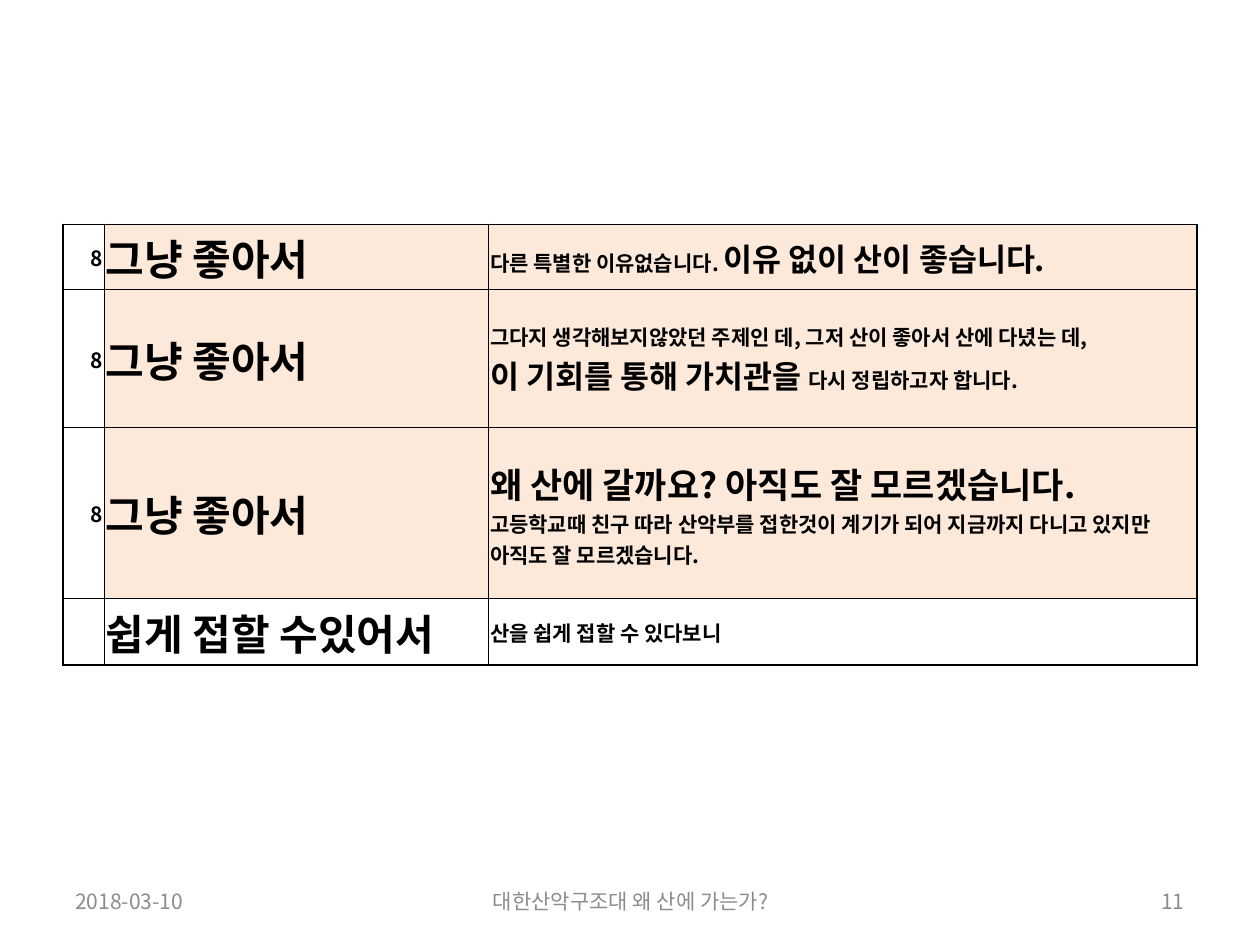
from lxml.etree import SubElement
from pptx import Presentation
from pptx.dml.color import RGBColor
from pptx.enum.text import MSO_ANCHOR as Anchor, PP_ALIGN as Align
from pptx.oxml import parse_xml
from pptx.oxml.ns import nsdecls, qn
from pptx.util import Inches, Pt

COLORS = {"ink": "000000", "peach": "FDE9D9", "footer": "8C8C8C"}
FONT = "Noto Sans CJK KR"
BASE = 12
COLUMNS = [0.33, 3.05, 5.62]
ROWS = [0.52, 1.09, 1.36, 0.53]
ANSWERS = [
    ("8", "그냥 좋아서",
     [[("다른 특별한 이유없습니다. ", 12), ("이유 없이 산이 좋습니다.", 18)]]),
    ("8", "그냥 좋아서",
     [[("그다지 생각해보지않았던 주제인 데, 그저 산이 좋아서 산에 다녔는 데, ", 12)],
      [("이 기회를 통해 가치관을 ", 18), ("다시 정립하고자 합니다.", 12)]]),
    ("8", "그냥 좋아서",
     [[("왜 산에 갈까요? 아직도 잘 모르겠습니다.", 20)],
      [("고등학교때 친구 따라 산악부를 접한것이 계기가 되어 지금까지 다니고 있지만 "
        "아직도 잘 모르겠습니다.", 12)]]),
    ("", "쉽게 접할 수있어서", [[("산을 쉽게 접할 수 있다보니", 12)]]),
]
FOOTERS = [
    (0.5, 2.33, "2018-03-10", Align.LEFT),
    (3.42, 3.17, "대한산악구조대 왜 산에 가는가?", Align.CENTER),
    (7.17, 2.33, "11", Align.RIGHT),
]


class SlideBuilder:
    """Holds the text style and the slide being filled."""

    def __init__(self, slide):
        self.slide = slide

    def text(self, frame, lines, color, align=Align.LEFT, size=BASE, bold=False):
        paragraph = frame.paragraphs[0]
        paragraph.alignment = align
        font = paragraph.font
        font.name, font.size, font.bold = FONT, Pt(size), bold
        font.color.rgb = RGBColor.from_string(COLORS[color])
        SubElement(paragraph._p.pPr.find(qn("a:defRPr")), qn("a:ea"), typeface=FONT)
        for number, line in enumerate(lines):
            if number:
                paragraph.add_line_break()
            for words, points in line:
                run = paragraph.add_run()
                run.text = words
                if points != size:
                    run.font.size = Pt(points)

    def border(self, cell, widths):
        for position, (side, points) in enumerate(widths.items()):
            cell._tc.get_or_add_tcPr().insert(position, parse_xml(
                f'<a:ln{side} {nsdecls("a")} w="{Pt(points)}"><a:solidFill>'
                f'<a:srgbClr val="{COLORS["ink"]}"/></a:solidFill></a:ln{side}>'))

    def cell(self, cell, lines, size, align, fill):
        cell.margin_left = cell.margin_top = cell.margin_right = Inches(0.01)
        cell.margin_bottom = 0
        cell.vertical_anchor = Anchor.MIDDLE
        if fill:
            cell.fill.solid()
            cell.fill.fore_color.rgb = RGBColor.from_string(COLORS[fill])
        else:
            cell.fill.background()
        self.text(cell.text_frame, lines, "ink", align, size, bold=True)

    def answer_table(self, left, top, answers):
        last_row, last_column = len(ROWS) - 1, len(COLUMNS) - 1
        table = self.slide.shapes.add_table(
            len(ROWS), len(COLUMNS), Inches(left), Inches(top),
            Inches(sum(COLUMNS)), Inches(sum(ROWS))).table
        table.first_row = table.horz_banding = False
        for column, width in zip(table.columns, COLUMNS):
            column.width = Inches(width)
        for r, (count, reason, comment) in enumerate(answers):
            table.rows[r].height = Inches(ROWS[r])
            fill = "peach" if r < last_row else None
            count_lines = [[(count, BASE)]] if count else []
            self.cell(table.cell(r, 0), count_lines, BASE, Align.RIGHT, None)
            self.cell(table.cell(r, 1), [[(reason, 24)]], 24, Align.LEFT, fill)
            self.cell(table.cell(r, 2), comment, BASE, Align.LEFT, fill)
            for c in range(len(COLUMNS)):
                outer = {"L": c == 0, "R": c == last_column,
                         "T": r == 0, "B": r == last_row}
                self.border(table.cell(r, c),
                            {side: 1 if edge else 0.5 for side, edge in outer.items()})

    def footer(self, left, width, words, align):
        frame = self.slide.shapes.add_textbox(
            Inches(left), Inches(6.95), Inches(width), Inches(0.4)).text_frame
        frame.word_wrap = True
        frame.vertical_anchor = Anchor.MIDDLE
        self.text(frame, [[(words, BASE)]], "footer", align)


def main():
    deck = Presentation()
    deck.slide_width, deck.slide_height = Inches(10), Inches(7.5)
    builder = SlideBuilder(deck.slides.add_slide(deck.slide_layouts[6]))
    builder.answer_table(0.5, 1.78, ANSWERS)
    for footer in FOOTERS:
        builder.footer(*footer)
    deck.save("out.pptx")


if __name__ == "__main__":
    main()
